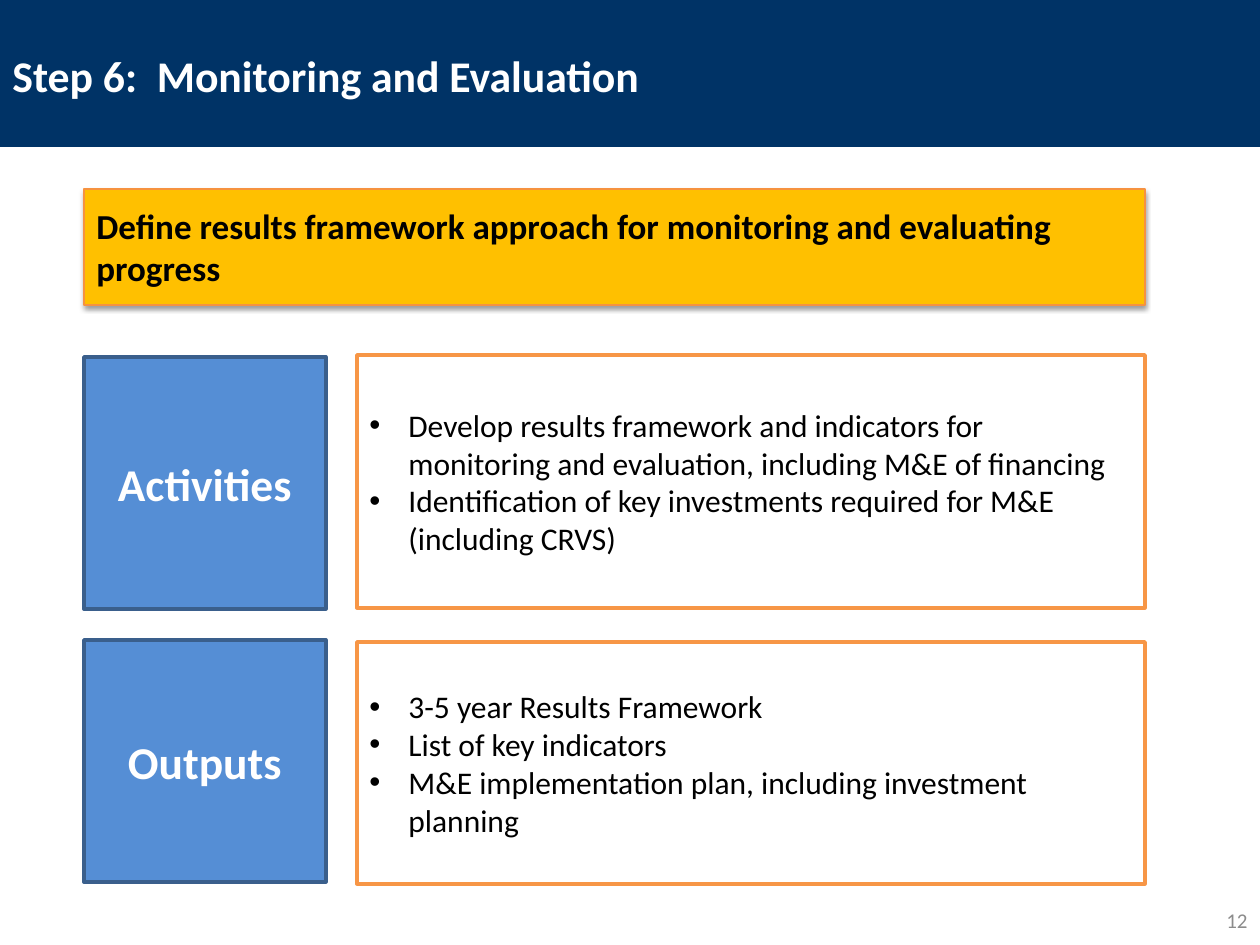
"""Builds the monitoring and evaluation step slide."""
from dataclasses import dataclass

from lxml import etree
from pptx import Presentation
from pptx.dml.color import RGBColor
from pptx.enum.shapes import MSO_SHAPE
from pptx.enum.text import MSO_ANCHOR, PP_ALIGN
from pptx.oxml.ns import qn
from pptx.util import Emu, Pt

RECT = MSO_SHAPE.RECTANGLE
MIDDLE = MSO_ANCHOR.MIDDLE
LEFT, CENTER, RIGHT = PP_ALIGN.LEFT, PP_ALIGN.CENTER, PP_ALIGN.RIGHT
PX = 914400 / 126
FONT = "Calibri"
INDENT = 39
COLORS = {
    "navy": "003366", "white": "FFFFFF", "black": "000000", "gray": "8C8C8C",
    "blue": "558ED5", "blue_line": "3A5F8C", "orange": "F79646",
    "gold": "FFC000", "gold_line": "F69240",
}


@dataclass(frozen=True)
class Style:
    size: int
    color: str
    bold: bool = False
    align: PP_ALIGN = LEFT
    bullet: bool = False
    fill: str | None = None
    line: str | None = None
    line_width: float = 2
    shadow: bool = False


@dataclass(frozen=True)
class Box:
    x: int
    y: int
    w: int
    h: int
    style: Style
    paragraphs: tuple[str, ...] = ()


TITLE = Style(25, "white", bold=True)
NUMBER = Style(12, "gray", align=RIGHT)
HEADER = Style(25, "white", fill="navy")
LABEL = Style(26, "white", bold=True, align=CENTER, fill="blue", line="blue_line")
DETAIL = Style(18, "black", bullet=True, fill="white", line="orange")
BANNER = Style(20, "black", bold=True, fill="gold", line="gold_line",
               line_width=0.75, shadow=True)

BOXES = (
    Box(966, 895, 294, 50, NUMBER, ("12",)),
    Box(0, 0, 1260, 147, HEADER),
    Box(0, 7, 1260, 135, TITLE, ("Step 6:  Monitoring and Evaluation",)),
    Box(84, 357, 242, 252, LABEL, ("Activities",)),
    Box(84, 640, 242, 242, LABEL, ("Outputs",)),
    Box(357, 355, 788, 253, DETAIL, (
        "Develop results framework and indicators for monitoring and evaluation, "
        "including M&E of financing",
        "Identification of key investments required for M&E (including CRVS)",
    )),
    Box(357, 642, 788, 242, DETAIL, (
        "3-5 year Results Framework",
        "List of key indicators",
        "M&E implementation plan, including investment planning",
    )),
    Box(84, 189, 1061, 116, BANNER, (
        "Define results framework approach for monitoring and evaluating progress",
    )),
)


def px(n: int) -> Emu:
    """Convert pixels to EMU."""
    return Emu(round(n * PX))


def rgb(name: str) -> RGBColor:
    """Look up a named colour."""
    return RGBColor.from_string(COLORS[name])


def add_shadow(sp) -> None:
    """Give a shape a soft shadow straight below it."""
    effects = sp._element.spPr.find(qn("a:effectLst"))
    shadow = etree.SubElement(effects, qn("a:outerShdw"), blurRad=str(Pt(3.1)),
                              dist=str(Pt(1.6)), dir="5400000", rotWithShape="0")
    color = etree.SubElement(shadow, qn("a:srgbClr"), val=COLORS["black"])
    etree.SubElement(color, qn("a:alpha"), val="38000")


def add_bullet(p) -> None:
    """Give a paragraph a hanging bullet."""
    pPr = p._p.get_or_add_pPr()
    pPr.set("marL", str(px(INDENT)))
    pPr.set("indent", str(-px(INDENT)))
    etree.SubElement(pPr, qn("a:buFont"), typeface="Arial")
    etree.SubElement(pPr, qn("a:buChar"), char="•")


def add_text(tf, box: Box) -> None:
    """Fill a text frame with the paragraphs of a box."""
    tf.word_wrap = True
    tf.vertical_anchor = MIDDLE
    for i, text in enumerate(box.paragraphs):
        p = tf.add_paragraph() if i else tf.paragraphs[0]
        p.alignment = box.style.align
        if box.style.bullet:
            add_bullet(p)
        r = p.add_run()
        r.text = text
        r.font.name = FONT
        r.font.size = Pt(box.style.size)
        r.font.bold = box.style.bold
        r.font.color.rgb = rgb(box.style.color)


def add_box(s, box: Box) -> None:
    """Draw a filled rectangle or a plain text box."""
    style = box.style
    place = px(box.x), px(box.y), px(box.w), px(box.h)
    if style.fill:
        sp = s.shapes.add_shape(RECT, *place)
        sp.shadow.inherit = False
        sp.fill.solid()
        sp.fill.fore_color.rgb = rgb(style.fill)
        if style.line:
            sp.line.color.rgb = rgb(style.line)
            sp.line.width = Pt(style.line_width)
        else:
            sp.line.fill.background()
        if style.shadow:
            add_shadow(sp)
    else:
        sp = s.shapes.add_textbox(*place)
    if box.paragraphs:
        add_text(sp.text_frame, box)


def main() -> None:
    """Build and save the slide."""
    prs = Presentation()
    prs.slide_width, prs.slide_height = px(1260), px(945)
    s = prs.slides.add_slide(prs.slide_layouts[6])
    for box in BOXES:
        add_box(s, box)
    prs.save("out.pptx")


if __name__ == "__main__":
    main()
